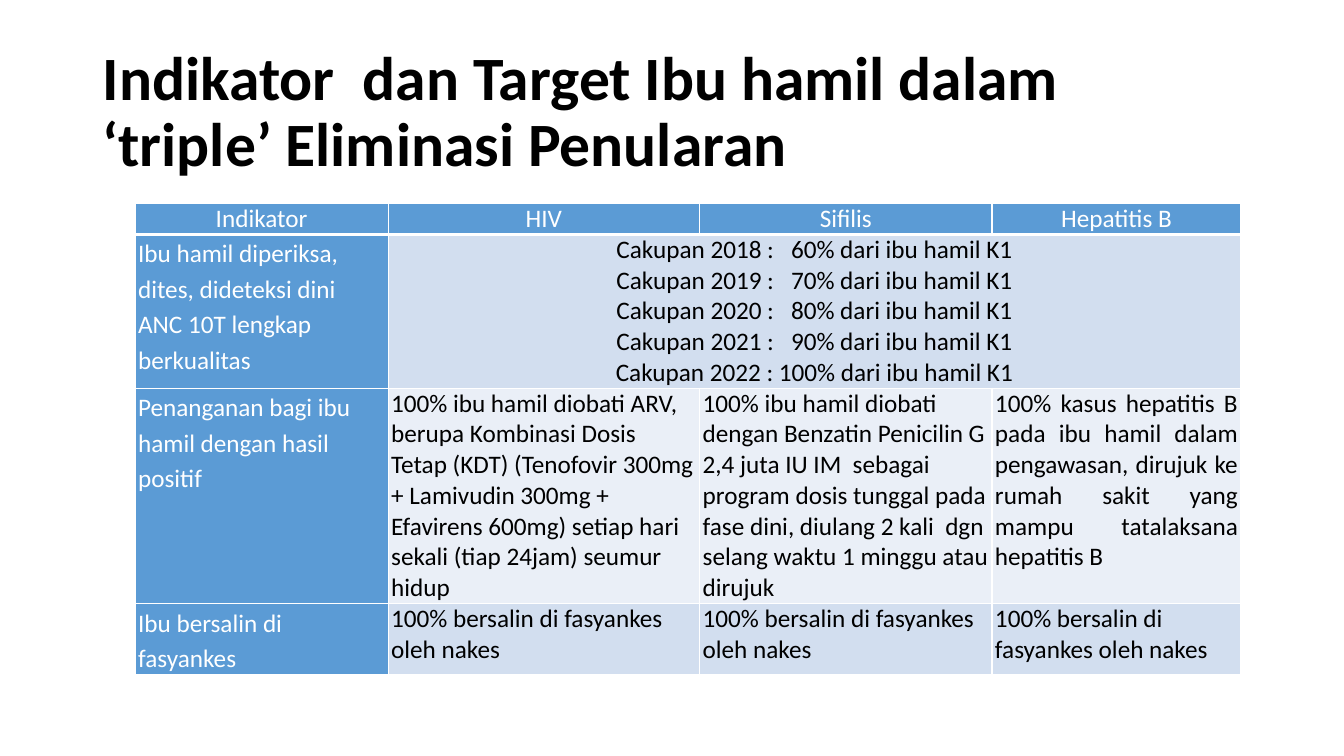
from dataclasses import dataclass

from lxml.etree import SubElement
from pptx import Presentation
from pptx.dml.color import RGBColor
from pptx.enum.text import MSO_ANCHOR as Anchor, MSO_AUTO_SIZE as AutoSize, PP_ALIGN as Align
from pptx.oxml.ns import qn
from pptx.table import Table, _Cell as Cell
from pptx.text.text import TextFrame
from pptx.util import Emu, Inches, Pt

# Grid: 100 columns by 100 rows over the whole slide
SLIDE_WIDTH, SLIDE_HEIGHT = Inches(13.33), Inches(7.5)
COLUMN_SPANS = [18.83, 23.18, 21.75, 18.53]
ROW_SPANS = [4, 20, 28, 9.2]

FONT = "Calibri"
WHITE, BLACK = "FFFFFF", "000000"
BLUE, BAND_DARK, BAND_LIGHT = "5B9BD5", "D2DEEF", "EAEFF7"


@dataclass
class CellStyle:
    fill: str
    color: str
    align: Align = Align.LEFT
    anchor: Anchor = Anchor.TOP
    line_spacing: float = 1.0
    space_before: int = 0
    bottom_border: int = 1


@dataclass
class IndicatorRow:
    indicator: str
    targets: list[str]
    band: str
    aligns: list[Align]


HEADER = CellStyle(BLUE, WHITE, Align.CENTER, Anchor.MIDDLE, space_before=6, bottom_border=3)
INDICATOR = CellStyle(BLUE, WHITE, line_spacing=1.15)

HEADINGS = ["Indikator", "HIV", "Sifilis", "Hepatitis B"]
COVERAGE = {2018: "  60", 2019: "  70", 2020: "  80", 2021: "  90", 2022: "100"}
DELIVERY = "100% bersalin di fasyankes oleh nakes"

INDICATOR_ROWS = [
    IndicatorRow(
        "Ibu hamil diperiksa, dites, dideteksi dini ANC 10T lengkap berkualitas",
        ["\n".join(f"Cakupan {year} : {share}% dari ibu hamil K1"
                   for year, share in COVERAGE.items())],
        BAND_DARK, [Align.CENTER]),
    IndicatorRow(
        "Penanganan bagi ibu hamil dengan hasil positif",
        ["100% ibu hamil diobati ARV, berupa Kombinasi Dosis Tetap (KDT) (Tenofovir 300mg "
         "+ Lamivudin 300mg + Efavirens 600mg) setiap hari sekali (tiap 24jam) seumur hidup",
         "100% ibu hamil diobati dengan Benzatin Penicilin G 2,4 juta IU IM  sebagai program "
         "dosis tunggal pada fase dini, diulang 2 kali  dgn selang waktu 1 minggu atau dirujuk",
         "100% kasus hepatitis B pada ibu hamil dalam pengawasan, dirujuk ke rumah sakit "
         "yang mampu tatalaksana hepatitis B"],
        BAND_LIGHT, [Align.LEFT, Align.LEFT, Align.JUSTIFY]),
    IndicatorRow("Ibu bersalin di fasyankes", [DELIVERY] * 3, BAND_DARK, [Align.LEFT] * 3),
]


def across(columns: float) -> Emu:
    return Emu(round(SLIDE_WIDTH * columns / 100))


def down(rows: float) -> Emu:
    return Emu(round(SLIDE_HEIGHT * rows / 100))


def rgb(color: str) -> RGBColor:
    return RGBColor.from_string(color)


def format_text(frame: TextFrame, size: int, color: str, bold: bool, align: Align,
                line_spacing: float, space_before: int = 0) -> None:
    for paragraph in frame.paragraphs:
        paragraph.alignment = align
        paragraph.line_spacing = line_spacing
        paragraph.space_before = Pt(space_before)
        for run in paragraph.runs:
            run.font.name, run.font.size, run.font.bold = FONT, Pt(size), bold
            run.font.color.rgb = rgb(color)


def add_borders(cell: Cell, bottom: int) -> None:
    properties = cell._tc.get_or_add_tcPr()
    for side, width in {"lnL": 1, "lnR": 1, "lnT": 1, "lnB": bottom}.items():
        border = SubElement(properties, qn(f"a:{side}"), w=str(Pt(width)))
        SubElement(SubElement(border, qn("a:solidFill")), qn("a:srgbClr"), val=WHITE)


def fill_cell(cell: Cell, content: str, style: CellStyle) -> None:
    add_borders(cell, style.bottom_border)
    cell.fill.solid()
    cell.fill.fore_color.rgb = rgb(style.fill)
    cell.margin_left = cell.margin_right = Inches(0.03)
    cell.margin_top = cell.margin_bottom = 0
    cell.vertical_anchor = style.anchor
    cell.text_frame.text = content
    format_text(cell.text_frame, 18, style.color, False, style.align,
                style.line_spacing, style.space_before)


def fill_targets(targets: Table) -> None:
    for column, span in zip(targets.columns, COLUMN_SPANS):
        column.width = across(span)
    for row, span in zip(targets.rows, ROW_SPANS):
        row.height = down(span)

    # Header row
    for col, heading in enumerate(HEADINGS):
        fill_cell(targets.cell(0, col), heading, HEADER)

    # Indicators with their targets; a single target spans all three diseases
    for row, entry in enumerate(INDICATOR_ROWS, start=1):
        fill_cell(targets.cell(row, 0), entry.indicator, INDICATOR)
        if len(entry.targets) == 1:
            targets.cell(row, 1).merge(targets.cell(row, len(HEADINGS) - 1))
        for col, (target, align) in enumerate(zip(entry.targets, entry.aligns), start=1):
            fill_cell(targets.cell(row, col), target, CellStyle(entry.band, BLACK, align))


def main() -> None:
    deck = Presentation()
    deck.slide_width, deck.slide_height = SLIDE_WIDTH, SLIDE_HEIGHT
    slide = deck.slides.add_slide(deck.slide_layouts[5])

    # Title
    title = slide.shapes.title
    title.left, title.top = across(6.9), down(5.33)
    title.width, title.height = across(86.27), down(19.33)
    heading = title.text_frame
    heading.text = "Indikator  dan Target Ibu hamil dalam ‘triple’ Eliminasi Penularan"
    heading.word_wrap = True
    heading.auto_size = AutoSize.NONE
    heading.vertical_anchor = Anchor.MIDDLE
    format_text(heading, 44, BLACK, True, Align.LEFT, 0.9)

    # Table of indicators and targets
    frame = slide.shapes.add_table(len(ROW_SPANS), len(COLUMN_SPANS), across(10.05), down(26.93),
                                   across(sum(COLUMN_SPANS)), down(sum(ROW_SPANS)))
    fill_targets(frame.table)

    deck.save("out.pptx")


if __name__ == "__main__":
    main()
